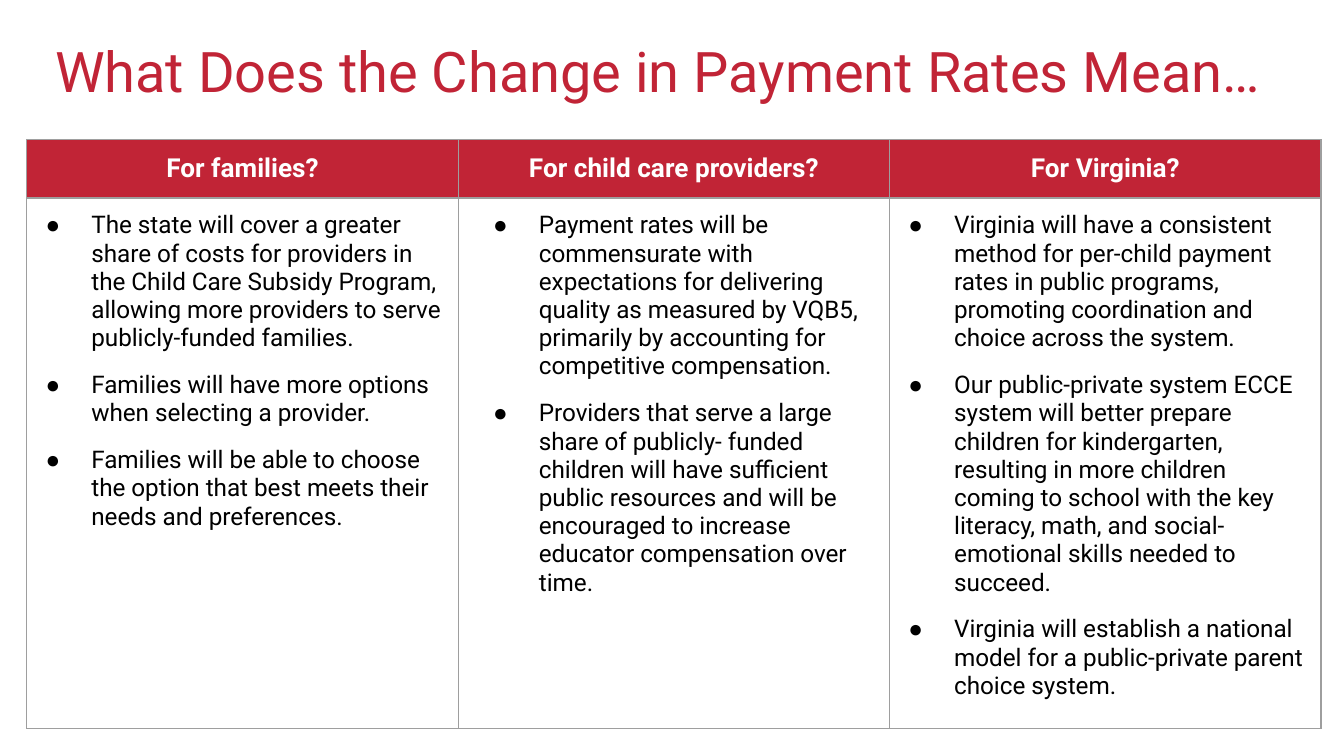
"""Build the slide on what the change in payment rates means."""
from lxml import etree
from pptx import Presentation
from pptx.dml.color import RGBColor
from pptx.enum.text import MSO_ANCHOR, PP_ALIGN
from pptx.oxml.ns import qn
from pptx.util import Inches, Pt

MIDDLE, TOP = MSO_ANCHOR.MIDDLE, MSO_ANCHOR.TOP
LEFT, CENTER = PP_ALIGN.LEFT, PP_ALIGN.CENTER

COLORS = {"red": "C12436", "white": "FFFFFF", "black": "000000", "grey": "9E9E9E"}
TITLE = "What Does the Change in Payment Rates Mean…"
COLUMNS = [
    {"heading": "For families?", "indent": 0.38, "points": [
        "The state will cover a greater share of costs for providers in the Child Care "
        "Subsidy Program, allowing more providers to serve publicly-funded families.",
        "Families will have more options when selecting a provider.",
        "Families will be able to choose the option that best meets their needs and "
        "preferences."]},
    {"heading": "For child care providers?", "indent": 0.5, "points": [
        "Payment rates will be commensurate with expectations for delivering quality as "
        "measured by VQB5, primarily by accounting for competitive compensation.",
        "Providers that serve a large share of publicly- funded children will have "
        "sufficient public resources and will be encouraged to increase educator "
        "compensation over time."]},
    {"heading": "For Virginia?", "indent": 0.38, "points": [
        "Virginia will have a consistent method for per-child payment rates in public "
        "programs, promoting coordination and choice across the system.",
        "Our public-private system ECCE system will better prepare children for "
        "kindergarten, resulting in more children coming to school with the key literacy, "
        "math, and social-emotional skills needed to succeed.",
        "Virginia will establish a national model for a public-private parent choice "
        "system."]},
]
FORMATS = {
    "title": {"size": Pt(30), "bold": False, "color": "red"},
    "heading": {"size": Pt(14), "bold": True, "color": "white"},
    "point": {"size": Pt(13), "bold": False, "color": "black"},
}
SLIDE_WIDTH = 10
SLIDE_HEIGHT = SLIDE_WIDTH * 9 / 16
COLUMN_WIDTH, ROW_HEIGHTS, FRAME_SIZE = 3.21, (0.43, 3.53), 3.28
HANGING, CELL_MARGIN, BORDER_WIDTH = 0.34, 0.1, 0.75


def rgb(name):
    return RGBColor.from_string(COLORS[name])


def write(para, text, style, align=LEFT):
    span = para.add_run()
    span.text = text
    para.alignment = align
    span.font.name = "Roboto"
    for key, value in FORMATS[style].items():
        if key == "color":
            span.font.color.rgb = rgb(value)
        else:
            setattr(span.font, key, value)


def add_color(parent, name):
    etree.SubElement(parent, qn("a:srgbClr"), val=COLORS[name])


def add_bullet(para, indent):
    properties = para._p.get_or_add_pPr()
    properties.set("marL", str(Inches(indent)))
    properties.set("indent", str(-Inches(HANGING)))
    add_color(etree.SubElement(properties, qn("a:buClr")), "black")
    etree.SubElement(properties, qn("a:buFont"), typeface="Arial")
    etree.SubElement(properties, qn("a:buChar"), char="●")


def style_cell(cell, fill):
    for side in ("left", "right", "top", "bottom"):
        setattr(cell, f"margin_{side}", Inches(CELL_MARGIN))
    cell.vertical_anchor = TOP
    properties = cell._tc.get_or_add_tcPr()
    for tag in ("a:lnL", "a:lnR", "a:lnT", "a:lnB"):
        line = etree.SubElement(properties, qn(tag), w=str(Pt(BORDER_WIDTH)))
        add_color(etree.SubElement(line, qn("a:solidFill")), "grey")
    cell.fill.solid()
    cell.fill.fore_color.rgb = rgb(fill)


def add_title(page):
    box = page.shapes.add_textbox(Inches(0.34), Inches(0.24), Inches(9.32), Inches(0.63))
    frame = box.text_frame
    margins = {"left": 0.07, "right": 0.07, "top": 0.04, "bottom": 0.04}
    for side, margin in margins.items():
        setattr(frame, f"margin_{side}", Inches(margin))
    frame.word_wrap = True
    frame.vertical_anchor = MIDDLE
    para = frame.paragraphs[0]
    para.line_spacing = 0.9
    write(para, TITLE, "title")


def add_comparison(page):
    holder = page.shapes.add_table(
        len(ROW_HEIGHTS), len(COLUMNS), Inches(0.2), Inches(1.04),
        Inches(FRAME_SIZE), Inches(FRAME_SIZE))
    table = holder.table
    table.horz_banding = False
    for row, height in zip(table.rows, ROW_HEIGHTS):
        row.height = Inches(height)
    for number, column in enumerate(COLUMNS):
        table.columns[number].width = Inches(COLUMN_WIDTH)
        header, body = table.cell(0, number), table.cell(1, number)
        style_cell(header, "red")
        style_cell(body, "white")
        write(header.text_frame.paragraphs[0], column["heading"], "heading", CENTER)
        frame = body.text_frame
        for position, point in enumerate(column["points"]):
            para = frame.add_paragraph() if position else frame.paragraphs[0]
            add_bullet(para, column["indent"])
            if position:
                para.space_before = Pt(10)
            write(para, point, "point")
    holder.width = holder.height = Inches(FRAME_SIZE)


def main():
    deck = Presentation()
    deck.slide_width, deck.slide_height = Inches(SLIDE_WIDTH), Inches(SLIDE_HEIGHT)
    page = deck.slides.add_slide(deck.slide_layouts[6])
    add_title(page)
    add_comparison(page)
    deck.save("out.pptx")


if __name__ == "__main__":
    main()
